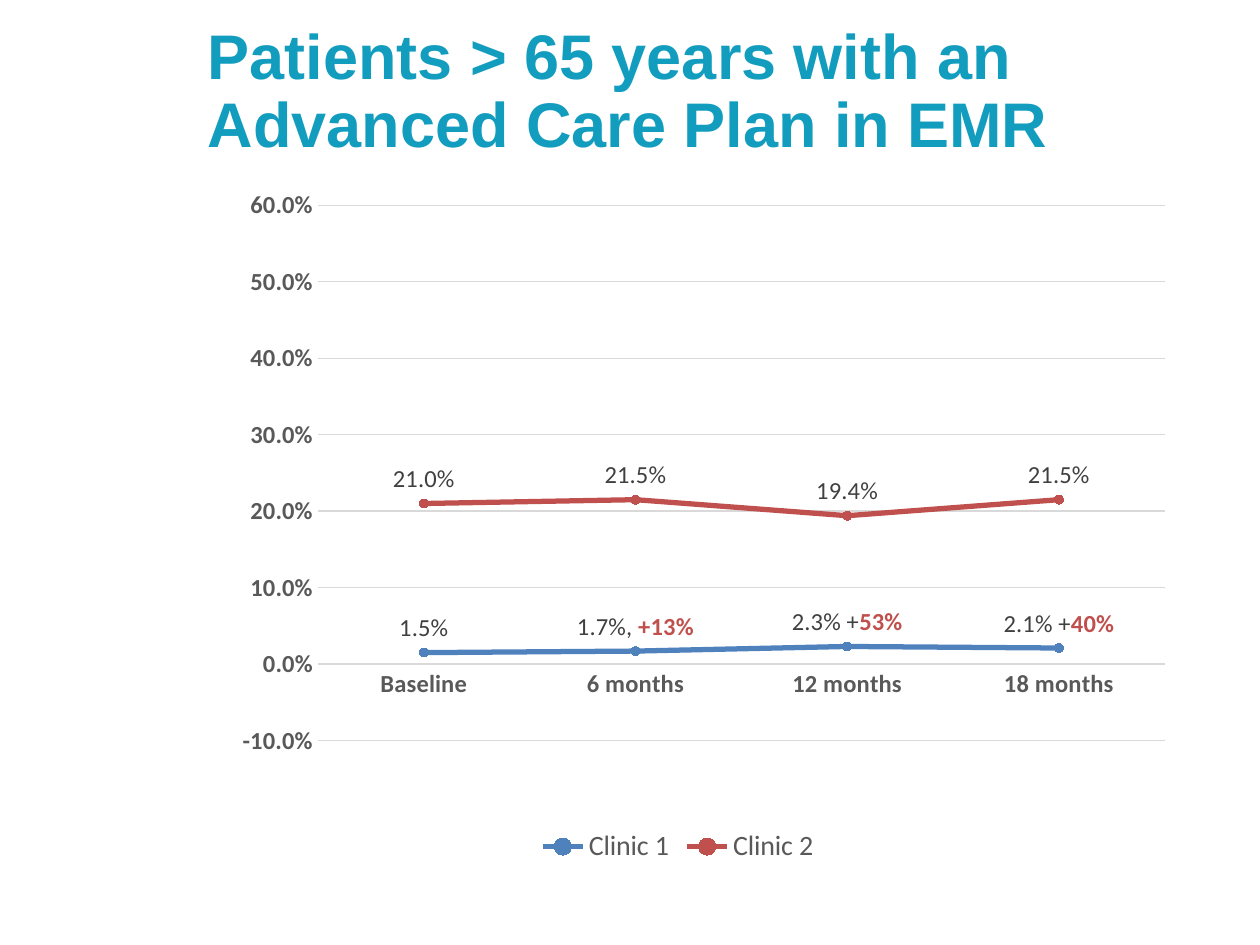
"""Build the slide that charts advanced care plans at two clinics."""
from dataclasses import dataclass, field

from lxml import etree
from pptx import Presentation
from pptx.chart.chart import Chart
from pptx.chart.data import CategoryChartData
from pptx.dml.color import RGBColor
from pptx.enum.chart import (XL_CHART_TYPE, XL_LABEL_POSITION,
                             XL_LEGEND_POSITION, XL_MARKER_STYLE, XL_TICK_MARK)
from pptx.enum.text import MSO_ANCHOR, MSO_AUTO_SIZE, PP_ALIGN
from pptx.oxml.ns import qn
from pptx.util import Pt

LINES = XL_CHART_TYPE.LINE_MARKERS
ABOVE = XL_LABEL_POSITION.ABOVE
BELOW = XL_LEGEND_POSITION.BOTTOM
CIRCLE = XL_MARKER_STYLE.CIRCLE
NO_TICK = XL_TICK_MARK.NONE
LEFT = PP_ALIGN.LEFT
BOTTOM = MSO_ANCHOR.BOTTOM
NO_FIT = MSO_AUTO_SIZE.NONE

COLORS = {"title": "129DBF", "text": "595959", "label": "404040",
          "grid": "D9D9D9", "blue": "4F81BD", "red": "C0504D", "black": "000000"}
FACE = "Calibri"
PERCENT = "0.0%"
TIMES = ("Baseline", "6 months", "12 months", "18 months")
PLOT = {"x": 0.13, "y": 0.02, "w": 0.87, "h": 0.79}


@dataclass
class Clinic:
    """One line of the chart, with its labels of (plain, strong) text."""
    name: str
    rates: tuple[float, ...]
    color: str
    notes: dict[int, tuple[str, str]] = field(default_factory=dict)


CLINICS = (
    Clinic("Clinic 1", (0.015, 0.017, 0.023, 0.021), "blue",
           {1: ("1.7%, ", "+13%"), 2: ("2.3% +", "53%"), 3: ("2.1% +", "40%")}),
    Clinic("Clinic 2", (0.21, 0.215, 0.194, 0.215), "red"),
)


def tint(name: str) -> RGBColor:
    """Look up a colour."""
    return RGBColor.from_string(COLORS[name])


def style(font, size: float, color: str, bold: bool = False, face: str = FACE) -> None:
    """Set the look of a font."""
    font.name, font.size, font.bold = face, Pt(size), bold
    font.color.rgb = tint(color)


def stroke(line, color: str, width: float) -> None:
    """Set the colour and width of a line."""
    line.color.rgb = tint(color)
    line.width = Pt(width)


def add_title(slide) -> None:
    """Fill and place the title."""
    title = slide.shapes.title
    title.left, title.top, title.width, title.height = Pt(111.6), Pt(6.5), Pt(522.7), Pt(85.7)
    frame = title.text_frame
    frame.auto_size, frame.word_wrap = NO_FIT, True
    frame.vertical_anchor = BOTTOM
    frame.margin_top = frame.margin_bottom = 0
    para = frame.paragraphs[0]
    para.alignment, para.line_spacing = LEFT, 0.9
    run = para.add_run()
    run.text = "Patients > 65 years with an Advanced Care Plan in EMR"
    style(run.font, 36, "title", True, "Arial")


def place_plot(chart: Chart) -> None:
    """Fix the inner plot area as fractions of the chart."""
    area = chart.element.find(".//" + qn("c:plotArea"))
    for old in area.findall(qn("c:layout")):
        area.remove(old)
    layout = etree.Element(qn("c:layout"))
    manual = etree.SubElement(layout, qn("c:manualLayout"))
    modes = {"layoutTarget": "inner", "xMode": "edge", "yMode": "edge"}
    for tag, value in (modes | PLOT).items():
        etree.SubElement(manual, qn("c:" + tag)).set("val", str(value))
    area.insert(0, layout)


def style_axes(chart: Chart) -> None:
    """Format both axes and the grid."""
    times, rates = chart.category_axis, chart.value_axis
    for axis in (times, rates):
        axis.major_tick_mark = axis.minor_tick_mark = NO_TICK
        style(axis.tick_labels.font, 14, "text", True)
    stroke(times.format.line, "grid", 0.75)
    rates.format.line.fill.background()
    rates.minimum_scale, rates.maximum_scale, rates.major_unit = -0.1, 0.6, 0.1
    rates.has_major_gridlines = True
    stroke(rates.major_gridlines.format.line, "grid", 0.75)
    rates.tick_labels.number_format = PERCENT
    rates.tick_labels.number_format_is_linked = False


def style_line(series, clinic: Clinic) -> None:
    """Format one clinic's line, markers and labels."""
    series.smooth = False
    stroke(series.format.line, clinic.color, 3)
    mark = series.marker
    mark.style, mark.size = CIRCLE, 5
    mark.format.fill.solid()
    mark.format.fill.fore_color.rgb = tint(clinic.color)
    stroke(mark.format.line, clinic.color, 0.75)
    labels = series.data_labels
    labels.show_value, labels.position = True, ABOVE
    labels.number_format, labels.number_format_is_linked = PERCENT, False
    style(labels.font, 14, "label")
    for index, (plain, strong) in clinic.notes.items():
        label = series.points[index].data_label
        para = label.text_frame.paragraphs[0]
        for text, color, bold in ((plain, "label", False), (strong, "red", True)):
            run = para.add_run()
            run.text = text
            style(run.font, 14, color, bold)
        label.position = ABOVE


def add_lines(slide) -> None:
    """Add the line chart."""
    data = CategoryChartData(number_format=PERCENT)
    data.categories = TIMES
    for clinic in CLINICS:
        data.add_series(clinic.name, clinic.rates)
    chart = slide.shapes.add_chart(
        LINES, Pt(109.4), Pt(108.7), Pt(556.6), Pt(388.1), data).chart
    style(chart.font, 10, "black")
    chart.has_title = False
    chart.plots[0].vary_by_categories = False
    chart.has_legend = True
    chart.legend.position = BELOW
    chart.legend.include_in_layout = False
    style(chart.legend.font, 16, "text")
    place_plot(chart)
    style_axes(chart)
    for series, clinic in zip(chart.plots[0].series, CLINICS):
        style_line(series, clinic)


def main() -> None:
    """Build and save the deck."""
    deck = Presentation()
    deck.slide_width, deck.slide_height = Pt(720), Pt(540)
    slide = deck.slides.add_slide(deck.slide_layouts[5])
    add_title(slide)
    add_lines(slide)
    deck.save("out.pptx")


if __name__ == "__main__":
    main()
